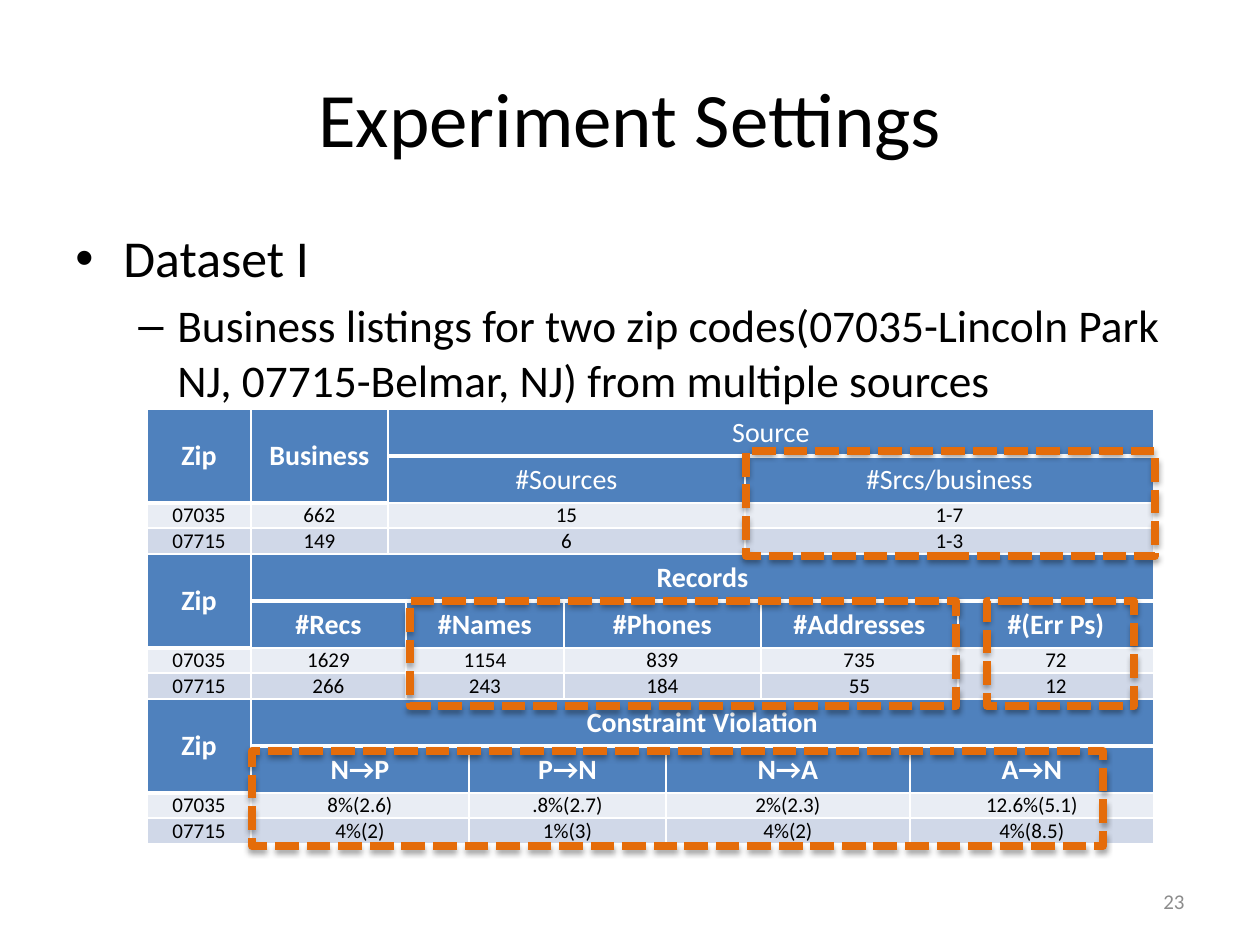
import pptx
import pptx.util
import pptx.dml.color
import pptx.enum.dml
import pptx.enum.shapes
import pptx.enum.text
import pptx.oxml
import pptx.oxml.ns
from dataclasses import dataclass


@dataclass(frozen=True)
class Theme:
    font: str = "Calibri"
    ink: str = "000000"
    white: str = "FFFFFF"
    head: str = "4F81BD"
    bands: tuple = ("E9EDF4", "D0D8E8")
    mark: str = "E46C0A"
    gray: str = "8C8C8C"
    title: float = 44
    item: float = 29.6
    sub: float = 25.9
    label: float = 16
    small: float = 12


T = Theme()
TITLE = "Experiment Settings"
ITEMS = [
    dict(text="Dataset I", size=T.item, bullet="•", left=48, hang=48),
    dict(text="Business listings for two zip codes(07035-Lincoln Park NJ, "
              "07715-Belmar, NJ) from multiple sources",
         size=T.sub, bullet="–", left=102, hang=39),
]
TABLES = [
    dict(top=409, cols=[104, 137, 357, 409], lead=["Zip", "Business"],
         group="Source", subs=["#Sources", "#Srcs/business"], bold=False,
         rows=[["07035", "662", "15", "1-7"],
               ["07715", "149", "6", "1-3"]]),
    dict(top=554, cols=[104, 155, 158, 197, 197, 196], lead=["Zip"],
         group="Records", bold=True,
         subs=["#Recs", "#Names", "#Phones", "#Addresses", "#(Err Ps)"],
         rows=[["07035", "1629", "1154", "839", "735", "72"],
               ["07715", "266", "243", "184", "55", "12"]]),
    dict(top=699, cols=[104, 218, 197, 244, 244], lead=["Zip"],
         group="Constraint Violation", bold=True,
         subs=["N→P", "P→N", "N→A", "A→N"],
         rows=[["07035", "8%(2.6)", ".8%(2.7)", "2%(2.3)", "12.6%(5.1)"],
               ["07715", "4%(2)", "1%(3)", "4%(2)", "4%(8.5)"]]),
]
MARKS = [(746, 451, 409, 105), (410, 601, 546, 105),
         (987, 601, 147, 105), (252, 751, 851, 95)]
PAGE = "23"
LEFT = 147
HEIGHTS = [47, 47, 25, 25]

NS = pptx.oxml.ns.nsdecls("a")
ALIGN = pptx.enum.text.PP_ALIGN
MIDDLE = pptx.enum.text.MSO_ANCHOR.MIDDLE


def px(n):
    return pptx.util.Emu(round(n * 914400 / 126))


def rgb(code):
    return pptx.dml.color.RGBColor.from_string(code)


def add_xml(node, xml):
    node.append(pptx.oxml.parse_xml(xml))


def write(para, text, size=T.small, color=T.ink, bold=False,
          align=ALIGN.LEFT, bullet=None, left=0, hang=0):
    para.alignment = align
    run = para.add_run()
    run.text = text
    font = run.font
    font.name, font.size, font.bold = T.font, pptx.util.Pt(size), bold
    font.color.rgb = rgb(color)
    if bullet:
        para.space_before = pptx.util.Pt(round(size * 0.2, 1))
        props = para._p.get_or_add_pPr()
        props.set("marL", str(px(left)))
        props.set("indent", str(-px(hang)))
        add_xml(props, f'<a:buFont {NS} typeface="Arial"/>')
        add_xml(props, f'<a:buChar {NS} char="{bullet}"/>')


def add_box(slide, place, anchor=MIDDLE):
    frame = slide.shapes.add_textbox(*map(px, place)).text_frame
    frame.word_wrap = True
    frame.vertical_anchor = anchor
    return frame


def set_cell(cell, fill, thick):
    props = cell._tc.get_or_add_tcPr()
    for side in "LRTB":
        width = pptx.util.Pt(3 if thick and side == "B" else 1)
        add_xml(props, f'<a:ln{side} {NS} w="{width}"><a:solidFill>'
                       f'<a:srgbClr val="{T.white}"/></a:solidFill></a:ln{side}>')
    cell.fill.solid()
    cell.fill.fore_color.rgb = rgb(fill)
    cell.vertical_anchor = MIDDLE


def add_grid(slide, top, cols, lead, group, subs, bold, rows):
    count, start = len(cols), len(lead)
    place = (LEFT, top, sum(cols), sum(HEIGHTS))
    grid = slide.shapes.add_table(4, count, *map(px, place)).table
    grid.first_row = grid.horz_banding = False
    for col, width in zip(grid.columns, cols):
        col.width = px(width)
    for row, height in zip(grid.rows, HEIGHTS):
        row.height = px(height)
    for c in range(start):
        grid.cell(0, c).merge(grid.cell(1, c))
    grid.cell(0, start).merge(grid.cell(0, count - 1))

    blank = [None] * (len(subs) - 1)
    lines = [lead + [group] + blank, [None] * start + subs] + rows
    for r, line in enumerate(lines):
        for c, text in enumerate(line):
            cell = grid.cell(r, c)
            fill = T.head if r < 2 else T.bands[r - 2]
            set_cell(cell, fill, r == 0 or r == 1 and c < start)
            if r > 1:
                cell.margin_top = cell.margin_bottom = 0
            if text is None:
                continue
            look = dict(size=T.label, color=T.white,
                        bold=bold or c < start) if r < 2 else {}
            write(cell.text_frame.paragraphs[0], text,
                  align=ALIGN.CENTER, **look)


def add_mark(slide, place):
    kind = pptx.enum.shapes.MSO_SHAPE.RECTANGLE
    rect = slide.shapes.add_shape(kind, *map(px, place))
    rect.fill.background()
    rect.line.color.rgb = rgb(T.mark)
    rect.line.width = pptx.util.Pt(4.5)
    rect.line.dash_style = pptx.enum.dml.MSO_LINE.SQUARE_DOT
    rect.shadow.inherit = False
    glow = rect._element.spPr.find(pptx.oxml.ns.qn("a:effectLst"))
    add_xml(glow, f'<a:outerShdw {NS} blurRad="40000" dist="23000" dir="5400000" '
                  f'rotWithShape="0"><a:srgbClr val="{T.ink}">'
                  '<a:alpha val="35000"/></a:srgbClr></a:outerShdw>')


def main():
    deck = pptx.Presentation()
    deck.slide_width, deck.slide_height = px(1260), px(945)
    slide = deck.slides.add_slide(deck.slide_layouts[6])

    title = add_box(slide, (63, 38, 1134, 157))
    write(title.paragraphs[0], TITLE, size=T.title, align=ALIGN.CENTER)

    body = add_box(slide, (63, 220, 1134, 179), pptx.enum.text.MSO_ANCHOR.TOP)
    for i, item in enumerate(ITEMS):
        write(body.add_paragraph() if i else body.paragraphs[0], **item)

    for table in TABLES:
        add_grid(slide, **table)
    for place in MARKS:
        add_mark(slide, place)

    page = add_box(slide, (903, 876, 294, 50))
    write(page.paragraphs[0], PAGE, color=T.gray, align=ALIGN.RIGHT)
    deck.save("out.pptx")


if __name__ == "__main__":
    main()
